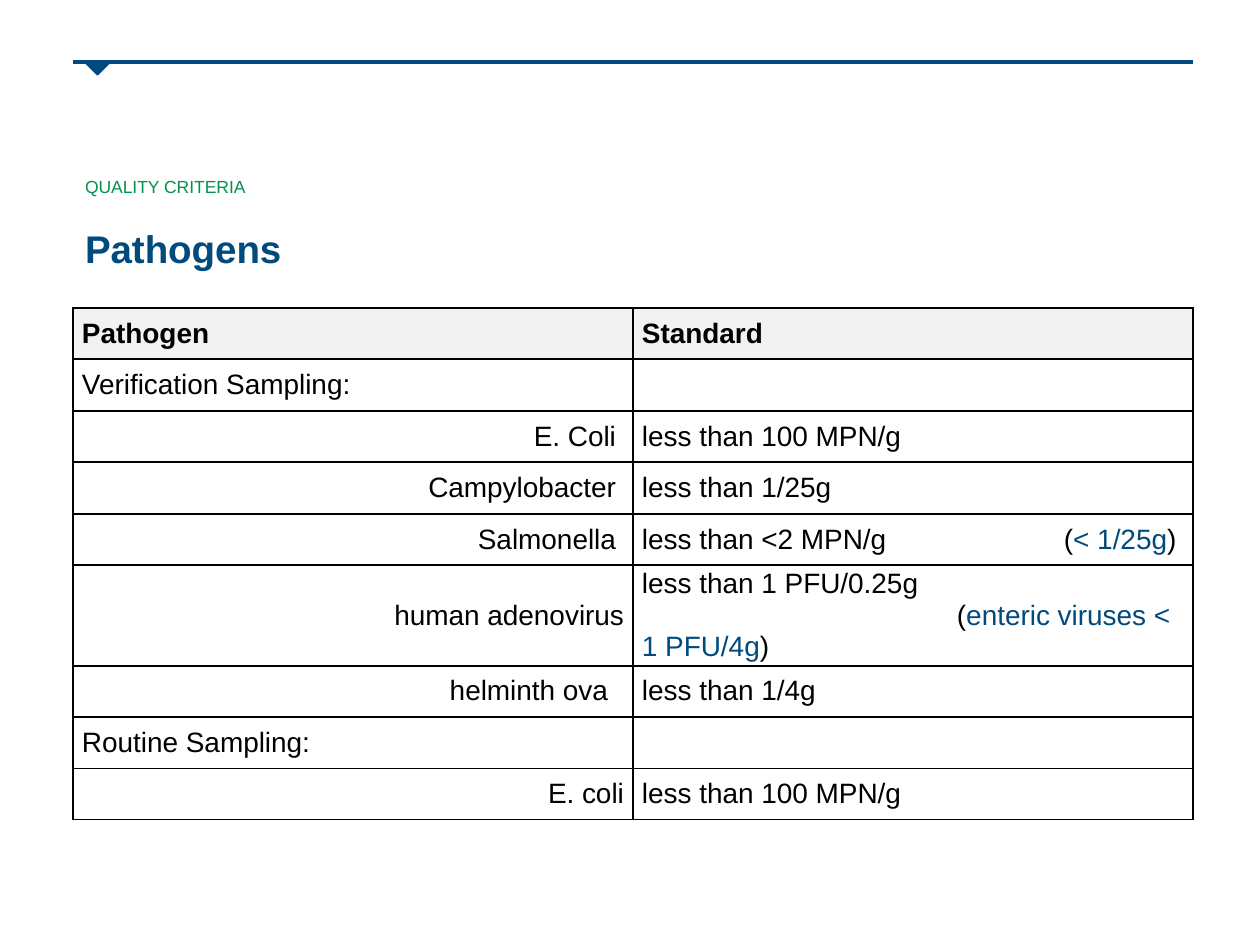
import pptx
import pptx.dml.color
import pptx.enum.shapes
import pptx.enum.text
import pptx.oxml
import pptx.oxml.ns
import pptx.util

SCALE = 914400 // 126
BLUE, GREEN, BLACK, HEADER_GREY = "004A7E", "04914D", "000000", "F2F2F2"
CELL_INSET = 9
WRAPPED_HEIGHT = 93

# Each row: name, indent from the right edge (None = left aligned),
# runs of the standard as (text, colour), tab stop of the standard
ROWS = [
    ("Pathogen", None, [("Standard", BLACK)], None),
    ("Verification Sampling:", None, [], None),
    ("E. Coli", 8, [("less than 100 MPN/g", BLACK)], None),
    ("Campylobacter", 8, [("less than 1/25g", BLACK)], None),
    ("Salmonella", 8, [("less than <2 MPN/g\t(", BLACK), ("< 1/25g", BLUE), (")", BLACK)], 422),
    ("human adenovirus", 0,
     [("less than 1 PFU/0.25g\n\t(", BLACK), ("enteric viruses < 1 PFU/4g", BLUE), (")", BLACK)], 315),
    ("helminth ova", 16, [("less than 1/4g", BLACK)], None),
    ("Routine Sampling:", None, [], None),
    ("E. coli", 0, [("less than 100 MPN/g", BLACK)], None),
]


def px(length):
    return pptx.util.Emu(length * SCALE)


def colour(hex_string):
    return pptx.dml.color.RGBColor.from_string(hex_string)


def set_values(target, values):
    for name, value in values.items():
        setattr(target, name, value)


def add_runs(paragraph, runs, size, bold=False):
    for text, hex_string in runs:
        for index, line in enumerate(text.split("\n")):
            if index:
                paragraph.add_line_break()
            run = paragraph.add_run()
            run.text = line
            set_values(run.font, {"name": "Arial", "size": pptx.util.Pt(size), "bold": bold})
            run.font.color.rgb = colour(hex_string)


def add_tab_stop(paragraph, position):
    properties = paragraph._p.get_or_add_pPr()
    properties.append(pptx.oxml.parse_xml(
        f'<a:tabLst {pptx.oxml.ns.nsdecls("a")}><a:tab pos="{px(position)}" algn="l"/></a:tabLst>'))


def add_borders(cell):
    properties = cell._tc.get_or_add_tcPr()
    for index, side in enumerate(("lnL", "lnR", "lnT", "lnB")):
        properties.insert(index, pptx.oxml.parse_xml(
            f'<a:{side} {pptx.oxml.ns.nsdecls("a")} w="12700"><a:solidFill>'
            f'<a:srgbClr val="{BLACK}"/></a:solidFill></a:{side}>'))


def add_rule(slide, left, top, width):
    """Blue rule with a triangle that points down."""
    line = slide.shapes.add_connector(
        pptx.enum.shapes.MSO_CONNECTOR.STRAIGHT, px(left), px(top), px(left + width), px(top))
    line.line.color.rgb = colour(BLUE)
    line.line.width = pptx.util.Pt(2)
    line._element.spPr.append(pptx.oxml.parse_xml(f'<a:effectLst {pptx.oxml.ns.nsdecls("a")}/>'))

    pointer = slide.shapes.add_shape(
        pptx.enum.shapes.MSO_SHAPE.RIGHT_TRIANGLE, px(left + 15), px(top - 10), px(19), px(19))
    pointer.rotation = 315
    pointer.shadow.inherit = False
    pointer.fill.solid()
    pointer.fill.fore_color.rgb = colour(BLUE)
    pointer.line.color.rgb = colour(BLUE)
    pointer.line.width = pptx.util.Pt(0.75)


def add_heading(slide, left, top, width, height, text, hex_string, size, bold, top_inset):
    box = slide.shapes.add_textbox(px(left), px(top), px(width), px(height))
    set_values(box.text_frame, {
        "word_wrap": True, "margin_left": px(12), "margin_right": px(12),
        "margin_top": px(top_inset), "margin_bottom": 0})
    add_runs(box.text_frame.paragraphs[0], [(text, hex_string)], size, bold)


def fill_cell(cell, runs, is_header, indent=None, tab_stop=None):
    set_values(cell, {
        "vertical_anchor": pptx.enum.text.MSO_ANCHOR.MIDDLE,
        "margin_left": px(CELL_INSET), "margin_right": px(CELL_INSET + (indent or 0)),
        "margin_top": 0, "margin_bottom": 0})
    cell.fill.solid()
    cell.fill.fore_color.rgb = colour(HEADER_GREY if is_header else "FFFFFF")
    add_borders(cell)
    paragraph = cell.text_frame.paragraphs[0]
    if indent is not None:
        paragraph.alignment = pptx.enum.text.PP_ALIGN.RIGHT
    if tab_stop:
        add_tab_stop(paragraph, tab_stop)
    add_runs(paragraph, runs, 16, is_header)


def add_pathogen_table(slide, left, top, width):
    # Rows alternate by one px; the row with a line break is taller
    heights = [WRAPPED_HEIGHT if any("\n" in text for text, _ in runs) else 51 + index % 2
               for index, (_, _, runs, _) in enumerate(ROWS)]
    table = slide.shapes.add_table(
        len(ROWS), 2, px(left), px(top), px(width), px(sum(heights))).table
    for column in table.columns:
        column.width = px(width // 2)
    for index, (name, indent, standard, tab_stop) in enumerate(ROWS):
        table.rows[index].height = px(heights[index])
        fill_cell(table.cell(index, 0), [(name, BLACK)], index == 0, indent=indent)
        fill_cell(table.cell(index, 1), standard, index == 0, tab_stop=tab_stop)


def main():
    presentation = pptx.Presentation()
    set_values(presentation, {"slide_width": px(1260), "slide_height": px(945)})
    slide = presentation.slides.add_slide(presentation.slide_layouts[6])
    add_rule(slide, 73, 62, 1120)
    add_heading(slide, 73, 168, 828, 33, "QUALITY CRITERIA", GREEN, 10, False, 8)
    add_heading(slide, 73, 215, 1120, 53, "Pathogens", BLUE, 22, True, 10)
    add_pathogen_table(slide, 73, 308, 1120)
    presentation.save("out.pptx")


if __name__ == "__main__":
    main()
